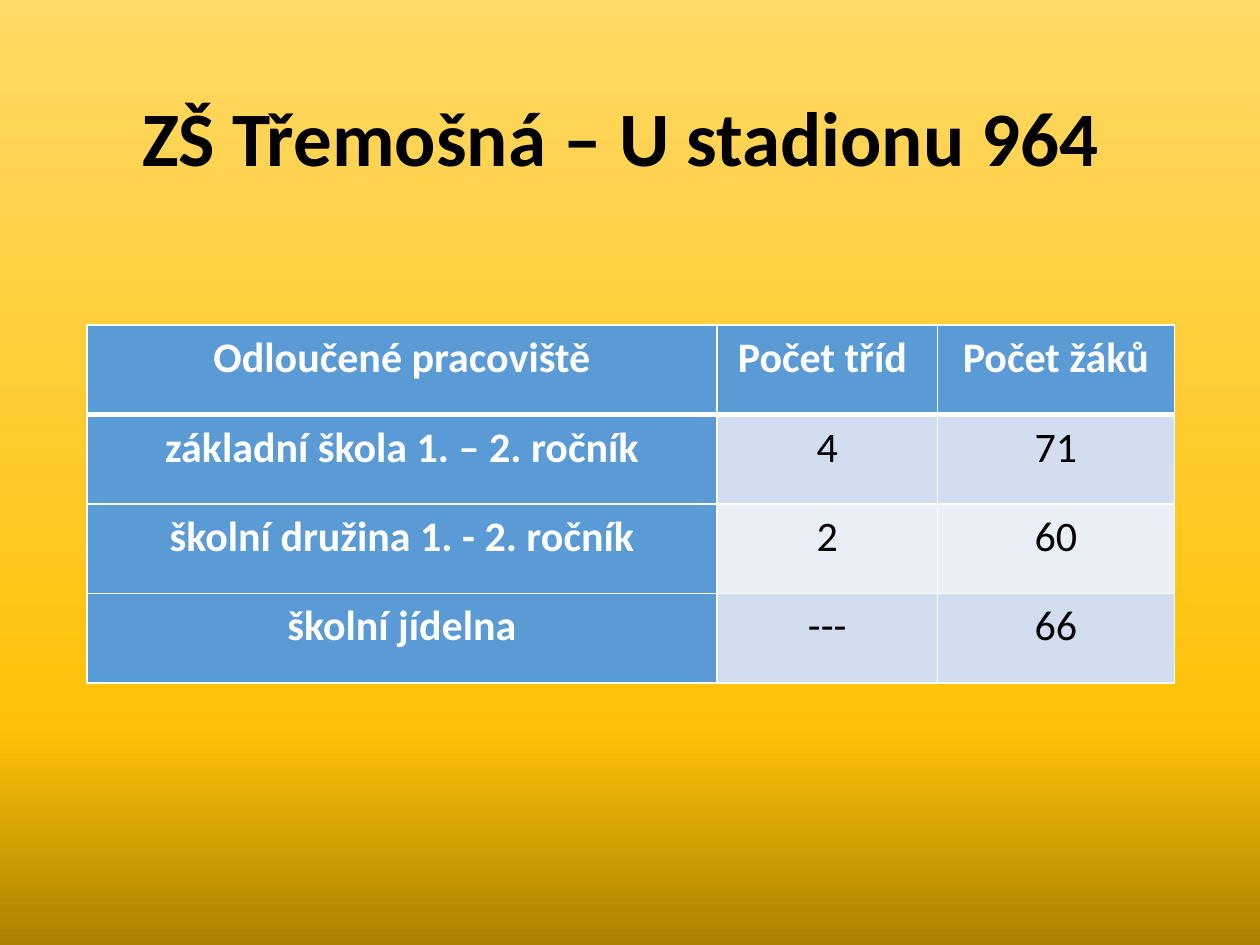
from copy import deepcopy
from lxml.etree import SubElement
from pptx import Presentation
from pptx.dml.color import RGBColor
from pptx.enum.text import MSO_ANCHOR, PP_ALIGN
from pptx.oxml.ns import qn
from pptx.util import Inches, Pt

TITLE = "ZŠ Třemošná – U stadionu 964 "
ROWS = [
    ("Odloučené pracoviště", "Počet tříd ", "Počet žáků"),
    ("základní škola 1. – 2. ročník", "4", "71"),
    ("školní družina 1. - 2. ročník", "2", "60"),
    ("školní jídelna", "---", "66"),
]
WIDTHS = (5, 1.75, 1.88)
HEIGHT = 0.71
LEFT, WIDTH = 0.69, 8.62

BLACK = RGBColor(0x00, 0x00, 0x00)
WHITE = RGBColor(0xFF, 0xFF, 0xFF)
BLUE = RGBColor(0x5B, 0x9B, 0xD5)
BANDS = (RGBColor(0xEA, 0xEF, 0xF7), RGBColor(0xD2, 0xDE, 0xEF))
GLOW = [
    (0, RGBColor(0xAB, 0x81, 0x00)),
    (0.23, RGBColor(0xFF, 0xC2, 0x08)),
    (1, RGBColor(0xFF, 0xD9, 0x66)),
]


def style(frame, size, color, bold, space):
    para = frame.paragraphs[0]
    para.alignment = PP_ALIGN.CENTER
    para.line_spacing = space
    font = para.runs[0].font
    font.name = "Calibri"
    font.size = Pt(size)
    font.bold = bold
    font.color.rgb = color


def border(cell, side, width):
    props = cell._tc.get_or_add_tcPr()
    line = SubElement(props, qn("a:ln" + side), w=str(Pt(width)))
    fill = SubElement(line, qn("a:solidFill"))
    SubElement(fill, qn("a:srgbClr"), val=str(WHITE))


def paint(slide):
    fill = slide.background.fill
    fill.gradient()
    fill.gradient_angle = 90
    stops = slide.element.xpath(".//a:gsLst")[0]
    stops.append(deepcopy(stops[0]))
    for stop, (place, color) in zip(fill.gradient_stops, GLOW):
        stop.position = place
        stop.color.rgb = color


def fill_cell(cell, text, row, col):
    head = row == 0 or col == 0
    cell.text_frame.text = text
    style(cell.text_frame, 24, WHITE if head else BLACK, head, 1.15)
    cell.margin_left = cell.margin_right = Inches(0.07)
    cell.margin_top = cell.margin_bottom = 0
    cell.vertical_anchor = MSO_ANCHOR.TOP
    border(cell, "L", 1)
    border(cell, "R", 1)
    border(cell, "T", 3 if row == 1 else 1)
    border(cell, "B", 3 if row == 0 else 1)
    cell.fill.solid()
    cell.fill.fore_color.rgb = BLUE if head else BANDS[row % 2]


def main():
    deck = Presentation()
    deck.slide_width, deck.slide_height = Inches(10), Inches(7.5)
    slide = deck.slides.add_slide(deck.slide_layouts[5])
    paint(slide)

    title = slide.shapes.title
    title.left, title.top = Inches(LEFT), Inches(0.4)
    title.width, title.height = Inches(WIDTH), Inches(1.45)
    title.text_frame.text = TITLE
    title.text_frame.vertical_anchor = MSO_ANCHOR.MIDDLE
    style(title.text_frame, 44, BLACK, True, 0.9)

    table = slide.shapes.add_table(
        len(ROWS), len(WIDTHS), Inches(LEFT), Inches(2.58),
        Inches(WIDTH), Inches(HEIGHT * len(ROWS))).table
    table.first_col = True
    for col, width in zip(table.columns, WIDTHS):
        col.width = Inches(width)
    for r, texts in enumerate(ROWS):
        table.rows[r].height = Inches(HEIGHT)
        for c, text in enumerate(texts):
            fill_cell(table.cell(r, c), text, r, c)

    deck.save("out.pptx")


if __name__ == "__main__":
    main()
